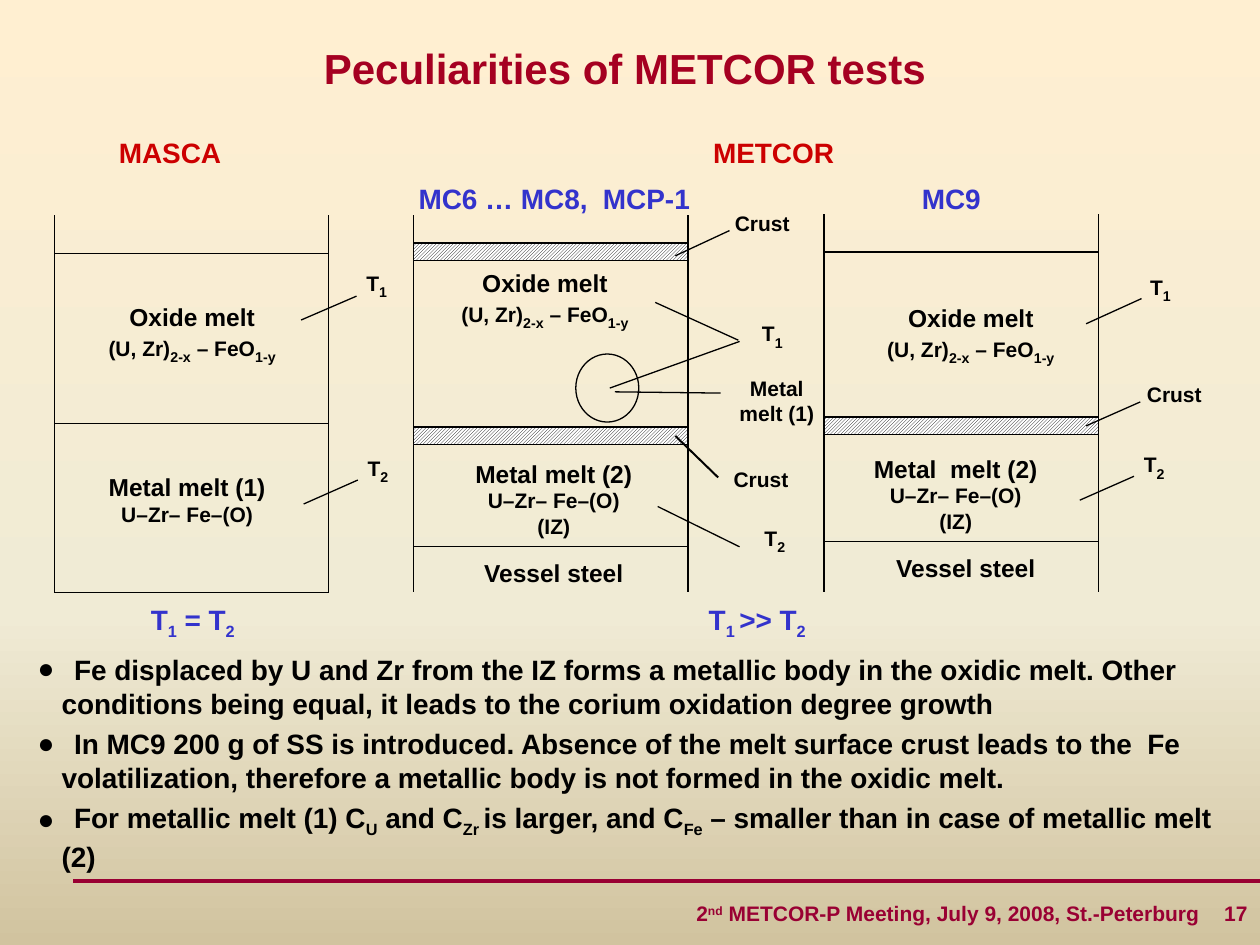
from copy import deepcopy
from dataclasses import dataclass

from lxml.etree import SubElement
from pptx import Presentation
from pptx.dml.color import RGBColor
from pptx.enum.dml import MSO_PATTERN
from pptx.enum.shapes import MSO_CONNECTOR, MSO_SHAPE
from pptx.enum.text import MSO_ANCHOR, PP_ALIGN
from pptx.oxml.ns import qn
from pptx.util import Inches, Pt

FONT = "Arial"
COLORS = {
    "ink": "000000", "paper": "FFFFFF", "title": "A50021", "family": "CC0000",
    "series": "3333CC", "footer": "990033",
}
BACKGROUND_STOPS = [(0, "FFEFD1"), (0.65, "F0EBD5"), (1, "D1C39F")]

# The slide is a grid of 100 columns by 75 rows of square cells.
COLUMNS, ROWS = 100, 75
VESSEL_WIDTH, VESSEL_BOTTOM, CRUST_HEIGHT = 21.8, 47, 1.4


@dataclass
class Label:
    """Lines are (text, size); parts between bars are sub- or superscripts."""
    lines: list
    left: float
    top: float
    width: float
    height: float = 3.7
    color: str = "ink"
    align: PP_ALIGN = PP_ALIGN.CENTER
    anchor: MSO_ANCHOR = MSO_ANCHOR.TOP
    baseline: int = -25


@dataclass
class Vessel:
    left: float
    top: float
    levels: list
    crusts: list


@dataclass
class Leader:
    start: tuple
    end: tuple
    weight: float = 0.75


OXIDE = [("Oxide melt", 14), ("(U, Zr)|2-x| – FeO|1-y|", 12)]
ALLOY = ("U–Zr– Fe–(O)", 12)
ZONE = ("(IZ)", 12)
STEEL = [("Vessel steel", 14)]
CRUST = [("Crust", 12)]
T1 = [("T|1|", 12)]
T2 = [("T|2|", 12)]

VESSELS = [
    Vessel(4.3, 17.1, levels=[20.1, 33.6, VESSEL_BOTTOM], crusts=[]),
    Vessel(32.8, 17.1, levels=[43.4], crusts=[19.3, 33.9]),
    Vessel(65.4, 17, levels=[20, 43], crusts=[33.1]),
]

LEADERS = [
    Leader((23.9, 25.4), (28.3, 23.5)),
    Leader((24.1, 40), (28.4, 38.1)),
    Leader((52, 24), (58.6, 27)),
    Leader((48.4, 30.8), (58.7, 27.1)),
    Leader((48.8, 31.1), (57.2, 31.2)),
    Leader((52.2, 40.2), (58.7, 43.4)),
    Leader((53.6, 20.3), (57.9, 18.3)),
    Leader((57, 37.9), (53.6, 34.6), 1.13),
    Leader((85.7, 39.7), (90, 37.8)),
    Leader((86.2, 25.7), (90.6, 23.7)),
    Leader((86.2, 33.8), (90.5, 31.9)),
]

LABELS = [
    Label([("Peculiarities of METCOR tests", 24)], 7.1, 2.8, 85, 5.1, "title",
          anchor=MSO_ANCHOR.MIDDLE),
    Label([("MASCA", 16)], 3.5, 10.3, 20, color="family"),
    Label([("METCOR", 16)], 51.4, 10.3, 20, color="family"),
    Label([("MC6 … MC8,  MCP-1", 16)], 29, 13.9, 30, color="series"),
    Label([("MC9", 16)], 65.5, 13.9, 20, color="series"),
    Label([("T|1| = T|2|", 16)], 5.3, 47.3, 20, color="series"),
    Label([("T|1 |>> T|2|", 16)], 50.1, 47.3, 20, color="series"),
    Label(OXIDE, 6.3, 23.5, 17.9, 7.4),
    Label([("Metal melt (1)", 14), ALLOY], 5.9, 37, 17.9, 6.2),
    Label(T1, 27.7, 20.7, 4.4),
    Label(T2, 27.8, 35.4, 4.4),
    Label(OXIDE, 34.3, 20.8, 17.9, 7.4),
    Label([("Metal melt (2)", 14), ALLOY, ZONE], 35, 35.9, 17.9, 6.2),
    Label(STEEL, 35, 43.8, 17.9, 3.5),
    Label(CRUST, 56.7, 16.2, 7.6, 2.9),
    Label(T1, 59.1, 24.7, 4.4),
    Label([("Metal", 12), ("melt (1)", 12)], 56.2, 29.3, 10.9),
    Label(CRUST, 56.6, 36.5, 7.6, 2.9),
    Label(T2, 59.3, 40.9, 4.4),
    Label(OXIDE, 68.1, 23.6, 17.9, 7.4),
    Label([("Metal  melt (2)", 14), ALLOY, ZONE], 66.9, 35.5, 17.9, 6.2),
    Label(STEEL, 67.7, 43.4, 17.9, 3.5),
    Label(T1, 89.9, 21, 4.4),
    Label(CRUST, 89.4, 29.8, 7.6, 2.9),
    Label(T2, 89.4, 35.1, 4.4),
    Label([("2|nd| METCOR-P Meeting, July 9, 2008, St.-Peterburg", 12)], 46.9, 70, 49.3, 5,
          "footer", PP_ALIGN.RIGHT, MSO_ANCHOR.MIDDLE, baseline=30),
    Label([("17", 12)], 95, 70, 5, 5, "footer", PP_ALIGN.RIGHT, MSO_ANCHOR.MIDDLE),
]

FINDINGS = Label([
    ("\tFe displaced by U and Zr from the IZ forms a metallic body in the oxidic melt. "
     "Other conditions being equal, it leads to the corium oxidation degree growth", 16),
    ("\tIn МС9 200 g of SS is introduced. Absence of the melt surface crust leads to "
     "the  Fe volatilization, therefore a metallic body is not formed in the oxidic melt.", 16),
    ("\tFor metallic melt (1) C|U| and C|Zr |is larger, and C|Fe| – smaller than in case "
     "of metallic melt (2)", 16),
], 2, 51.3, 95.5, 18.1, align=PP_ALIGN.LEFT)


def cells(count: float) -> int:
    return Inches(count / 10)


def rgb(name: str) -> RGBColor:
    return RGBColor.from_string(COLORS[name])


def paint_background(slide) -> None:
    fill = slide.background.fill
    fill.gradient()
    fill.gradient_angle = 270
    stop_list = slide.element.find(".//" + qn("a:gsLst"))
    stop_list.insert(1, deepcopy(stop_list[0]))
    for stop, (position, color) in zip(fill.gradient_stops, BACKGROUND_STOPS):
        stop.position = position
        stop.color.rgb = RGBColor.from_string(color)


def draw_line(slide, start: tuple, end: tuple, weight: float = 0.75, color: str = "ink") -> None:
    ends = [cells(value) for value in (*start, *end)]
    connector = slide.shapes.add_connector(MSO_CONNECTOR.STRAIGHT, *ends)
    connector.line.color.rgb = rgb(color)
    connector.line.width = Pt(weight)
    SubElement(connector.element.spPr, qn("a:effectLst"))


def draw_shape(slide, preset: MSO_SHAPE, left: float, top: float, width: float, height: float):
    shape = slide.shapes.add_shape(preset, *map(cells, (left, top, width, height)))
    shape.shadow.inherit = False
    shape.line.color.rgb = rgb("ink")
    shape.line.width = Pt(0.75)
    shape.fill.background()
    return shape


def draw_vessel(slide, vessel: Vessel) -> None:
    right = vessel.left + VESSEL_WIDTH
    for wall in (vessel.left, right):
        draw_line(slide, (wall, vessel.top), (wall, VESSEL_BOTTOM))
    for level in vessel.levels:
        draw_line(slide, (vessel.left, level), (right, level))
    for top in vessel.crusts:
        crust = draw_shape(slide, MSO_SHAPE.RECTANGLE, vessel.left, top, VESSEL_WIDTH, CRUST_HEIGHT)
        crust.fill.patterned()
        crust.fill.pattern = MSO_PATTERN.LIGHT_UPWARD_DIAGONAL
        crust.fill.fore_color.rgb = rgb("ink")
        crust.fill.back_color.rgb = rgb("paper")


def add_bullet(paragraph) -> None:
    """Hang a round bullet and set the tab that indents the first line."""
    properties = paragraph._p.get_or_add_pPr()
    properties.set("marL", str(cells(1.9)))
    properties.set("indent", str(-cells(1.9)))
    SubElement(properties, qn("a:buFont"), typeface=FONT)
    SubElement(properties, qn("a:buChar"), char="●")
    tabs = SubElement(properties, qn("a:tabLst"))
    SubElement(tabs, qn("a:tab"), pos=str(cells(2.9)), algn="l")


def draw_label(slide, label: Label, bulleted: bool = False) -> None:
    box = slide.shapes.add_textbox(*map(cells, (label.left, label.top, label.width, label.height)))
    frame = box.text_frame
    frame.word_wrap = True
    frame.vertical_anchor = label.anchor
    for index, (text, size) in enumerate(label.lines):
        paragraph = frame.add_paragraph() if index else frame.paragraphs[0]
        paragraph.alignment = label.align
        if bulleted:
            paragraph.space_before = Pt(4 if index else 0)
            add_bullet(paragraph)
        font = paragraph.font
        font.name, font.size, font.bold = FONT, Pt(size), True
        font.color.rgb = rgb(label.color)
        for part, piece in enumerate(text.split("|")):
            if not piece:
                continue
            run = paragraph.add_run()
            run.text = piece
            if part % 2:
                run.font._element.set("baseline", str(label.baseline * 1000))
                if label.baseline < 0:
                    run.font.size = Pt(max(size, 14))


def main() -> None:
    presentation = Presentation()
    presentation.slide_width, presentation.slide_height = cells(COLUMNS), cells(ROWS)
    slide = presentation.slides.add_slide(presentation.slide_layouts[6])
    paint_background(slide)
    draw_line(slide, (5.8, 69.9), (COLUMNS, 69.9), 2.25, "footer")
    for vessel in VESSELS:
        draw_vessel(slide, vessel)
    draw_shape(slide, MSO_SHAPE.OVAL, 45.7, 28.1, 5, 5.4)
    for leader in LEADERS:
        draw_line(slide, leader.start, leader.end, leader.weight)
    for label in LABELS:
        draw_label(slide, label)
    draw_label(slide, FINDINGS, bulleted=True)
    presentation.save("out.pptx")


if __name__ == "__main__":
    main()
